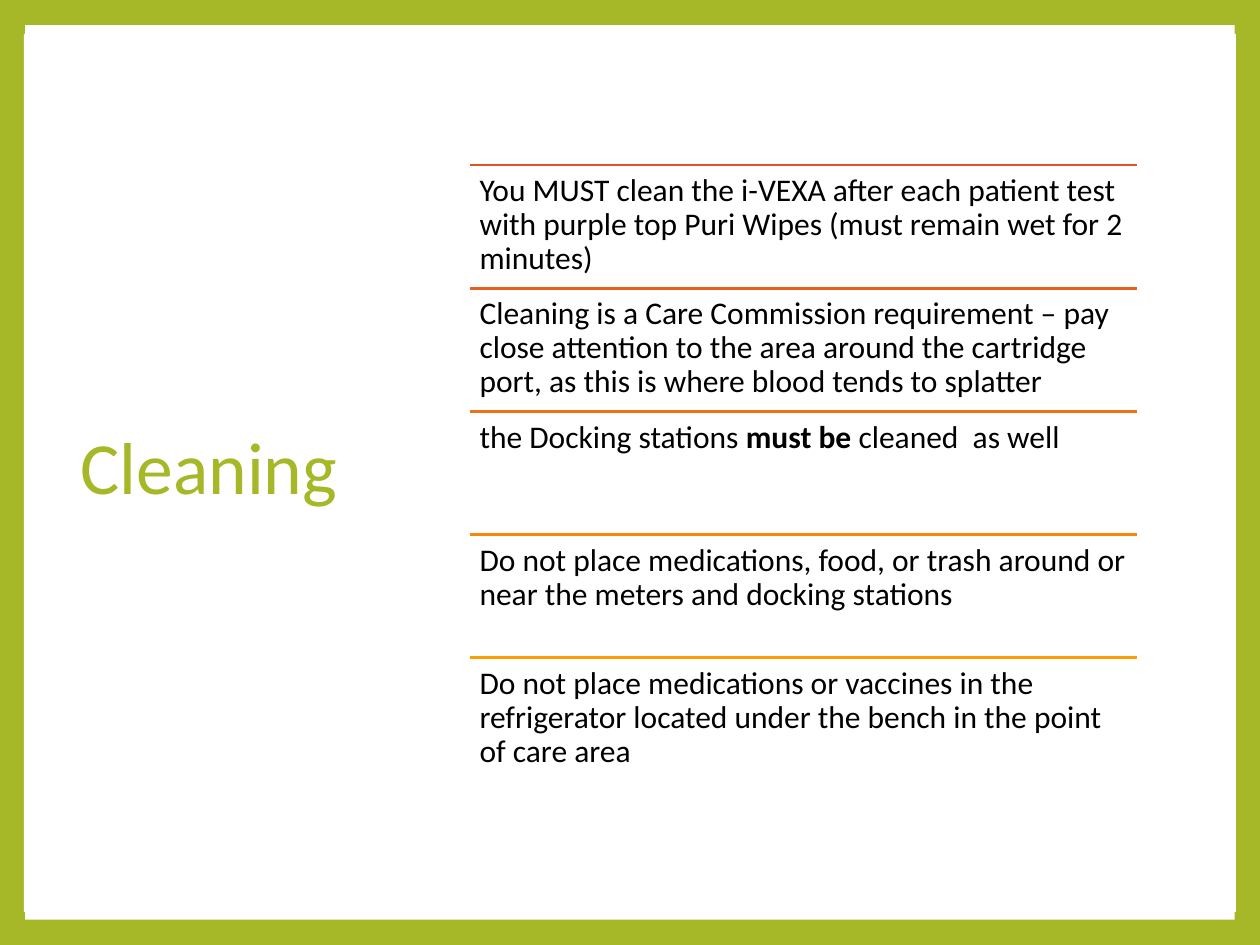
"""Build the Cleaning slide: a title beside five ruled instructions."""
from lxml.etree import SubElement
from pptx import Presentation
from pptx.dml.color import RGBColor
from pptx.enum.shapes import MSO_CONNECTOR, MSO_SHAPE
from pptx.enum.text import MSO_ANCHOR, PP_ALIGN
from pptx.oxml.ns import qn
from pptx.util import Pt

TITLE = "Cleaning"
ROWS = [
    ("DF5327", [("You MUST clean the i-VEXA after each patient test with purple top "
                 "Puri Wipes (must remain wet for 2 minutes)", False)]),
    ("E7611D", [("Cleaning is a Care Commission requirement – pay close attention to the "
                 "area around the cartridge port, as this is where blood tends to splatter", False)]),
    ("EF7213", [("the Docking stations ", False), ("must be ", True), ("cleaned  as well", False)]),
    ("F78609", [("Do not place medications, food, or trash around or near the meters "
                 "and docking stations", False)]),
    ("FE9E00", [("Do not place medications or vaccines in the refrigerator located under "
                 "the bench in the point of care area", False)]),
]
COLORS = {"green": "A6B727", "white": "FFFFFF", "black": "000000"}
PANELS = [(14.4, 14.4, 691.2, 511.2), (13.7, 19.4, 692.6, 501.8)]
LEFT, TOP, WIDTH, PITCH = 268.6, 94.3, 380.9, 70.4


def write(shape, runs, size, color, anchor=MSO_ANCHOR.TOP, inset=None):
    tf = shape.text_frame
    tf.word_wrap = True
    tf.vertical_anchor = anchor
    if inset is not None:
        tf.margin_left = tf.margin_right = tf.margin_top = tf.margin_bottom = Pt(inset)
    p = tf.paragraphs[0]
    p.alignment = PP_ALIGN.LEFT
    p.line_spacing = 0.9
    for text, bold in runs:
        r = p.add_run()
        r.text = text
        r.font.name = "Calibri"
        r.font.size = Pt(size)
        r.font.bold = bold
        r.font.color.rgb = RGBColor.from_string(color)


prs = Presentation()
prs.slide_width, prs.slide_height = Pt(720), Pt(540)
s = prs.slides.add_slide(prs.slide_layouts[5])
s.background.fill.solid()
s.background.fill.fore_color.rgb = RGBColor.from_string(COLORS["green"])

title = s.shapes.title
for box in PANELS:
    sp = s.shapes.add_shape(MSO_SHAPE.RECTANGLE, *map(Pt, box))
    sp.shadow.inherit = False
    sp.fill.solid()
    sp.fill.fore_color.rgb = RGBColor.from_string(COLORS["white"])
    sp.line.fill.background()
    title.element.addprevious(sp.element)

title.left, title.top, title.width, title.height = map(Pt, (38.9, 48.2, 198.7, 441.4))
write(title, [(TITLE, False)], 42, COLORS["green"], anchor=MSO_ANCHOR.MIDDLE)

for i, (color, runs) in enumerate(ROWS):
    y = TOP + i * PITCH
    line = s.shapes.add_connector(MSO_CONNECTOR.STRAIGHT, Pt(LEFT), Pt(y), Pt(LEFT + WIDTH), Pt(y))
    line.line.color.rgb = RGBColor.from_string(color)
    line.line.width = Pt(1.5)
    SubElement(line.element.spPr, qn("a:effectLst"))
    tb = s.shapes.add_textbox(Pt(LEFT), Pt(y), Pt(WIDTH), Pt(PITCH))
    write(tb, runs, 18, COLORS["black"], inset=5.4)

prs.save("out.pptx")
